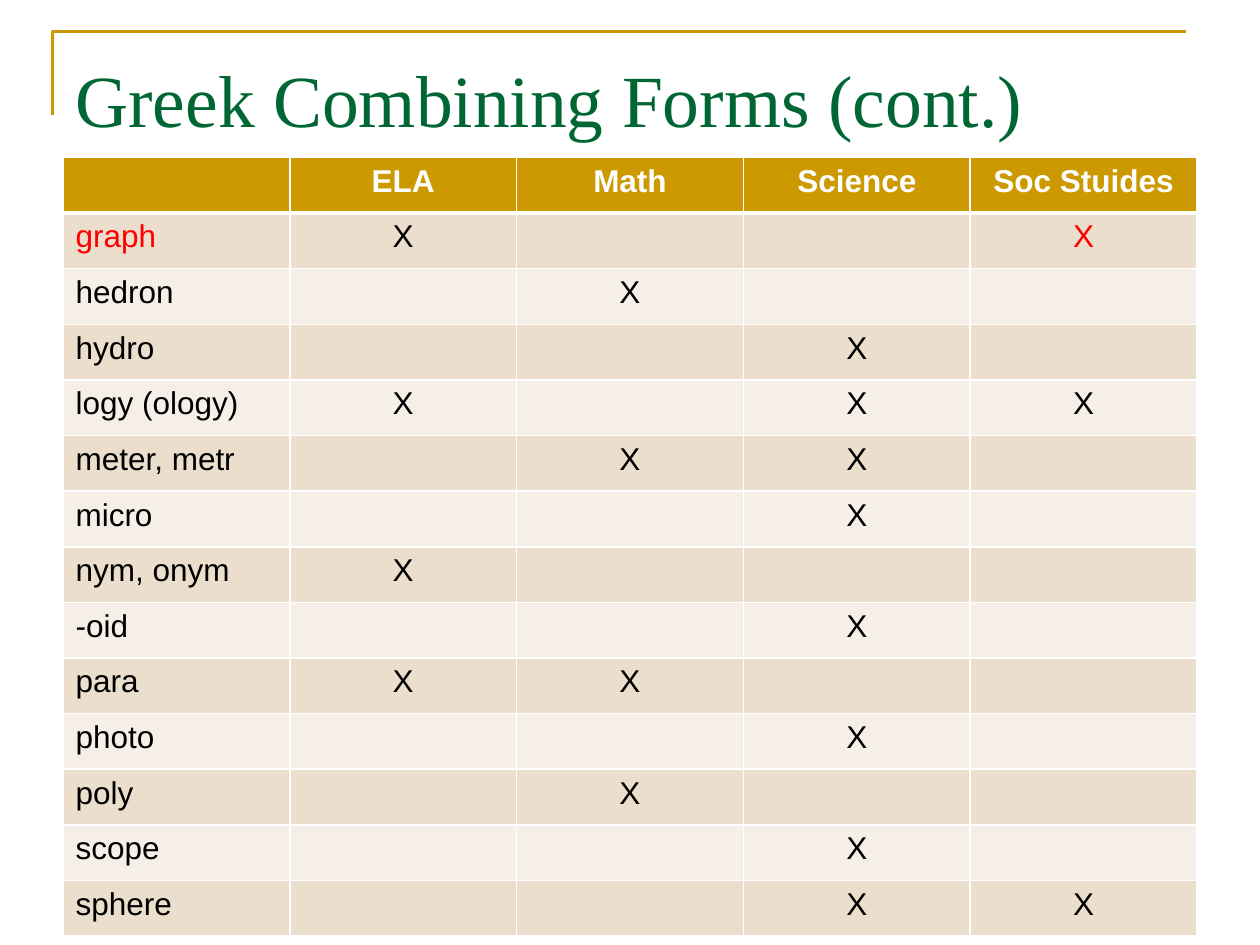
from lxml.etree import SubElement
from pptx import Presentation
from pptx.dml.color import RGBColor
from pptx.enum.text import MSO_ANCHOR, PP_ALIGN
from pptx.oxml.ns import qn
from pptx.util import Pt

COLORS = {"gold": "CC9900", "green": "006633", "white": "FFFFFF", "black": "000000",
          "red": "FF0000", "sand": "ECDECC", "cream": "F6EFE7"}
SUBJECTS = ["ELA", "Math", "Science", "Soc Stuides"]
FORMS = [
    ("graph", ["ELA", "Soc Stuides"]),
    ("hedron", ["Math"]),
    ("hydro", ["Science"]),
    ("logy (ology)", ["ELA", "Science", "Soc Stuides"]),
    ("meter, metr", ["Math", "Science"]),
    ("micro", ["Science"]),
    ("nym, onym", ["ELA"]),
    ("-oid", ["Science"]),
    ("para", ["ELA", "Math"]),
    ("photo", ["Science"]),
    ("poly", ["Math"]),
    ("scope", ["Science"]),
    ("sphere", ["Science", "Soc Stuides"]),
]
RED_CELLS = {(1, 0), (1, 4)}


class Deck:
    """Hold the style and the current slide, and draw each kind of element."""

    def __init__(self, prs):
        self.s = prs.slides.add_slide(prs.slide_layouts[6])
        self.title_font = "Times New Roman"
        self.body_font = "Arial"

    def color(self, name):
        return RGBColor.from_string(COLORS[name])

    def run(self, p, text, font, size, color, bold=False):
        r = p.add_run()
        r.text = text
        r.font.name = font
        r.font.size = Pt(size)
        r.font.bold = bold
        r.font.color.rgb = self.color(color)

    def corner(self, x, y, w, h):
        fb = self.s.shapes.build_freeform(Pt(x), Pt(y + h))
        fb.add_line_segments([(Pt(x), Pt(y)), (Pt(x + w), Pt(y))], close=False)
        sp = fb.convert_to_shape()
        sp.shadow.inherit = False
        sp.fill.background()
        sp.line.color.rgb = self.color("gold")
        sp.line.width = Pt(1.5)

    def title(self, text, x, y, w, h):
        tf = self.s.shapes.add_textbox(Pt(x), Pt(y), Pt(w), Pt(h)).text_frame
        tf.word_wrap = True
        tf.vertical_anchor = MSO_ANCHOR.TOP
        tf.margin_top = Pt(9)
        self.run(tf.paragraphs[0], text, self.title_font, 42, "green")

    def borders(self, cell, **widths):
        tc_pr = cell._tc.get_or_add_tcPr()
        for side in "LRTB":
            ln = SubElement(tc_pr, qn(f"a:ln{side}"), w=str(Pt(widths.get(side, 1))))
            fill = SubElement(ln, qn("a:solidFill"))
            SubElement(fill, qn("a:srgbClr"), val=COLORS["white"])

    def table(self, rows, x, y, w, h):
        table = self.s.shapes.add_table(len(rows), len(rows[0]), Pt(x), Pt(y), Pt(w), Pt(h)).table
        for i, row in enumerate(rows):
            table.rows[i].height = Pt(h / len(rows))
            header = i == 0
            fill = "gold" if header else "sand" if i % 2 else "cream"
            for j, text in enumerate(row):
                cell = table.cell(i, j)
                self.borders(cell, T=3 if i == 1 else 1, B=3 if header else 1)
                cell.fill.solid()
                cell.fill.fore_color.rgb = self.color(fill)
                p = cell.text_frame.paragraphs[0]
                if j:
                    p.alignment = PP_ALIGN.CENTER
                if text:
                    color = "white" if header else "red" if (i, j) in RED_CELLS else "black"
                    self.run(p, text, self.body_font, 18, color, header)


def main():
    prs = Presentation()
    prs.slide_width, prs.slide_height = Pt(720), Pt(540)
    deck = Deck(prs)
    deck.corner(30, 18, 648, 48)
    deck.title("Greek Combining Forms (cont.)", 36, 21.6, 648, 90)
    marks = [[form] + ["X" if subject in used else "" for subject in SUBJECTS]
             for form, used in FORMS]
    deck.table([[""] + SUBJECTS] + marks, 36, 90, 648, 445)
    prs.save("out.pptx")


if __name__ == "__main__":
    main()
